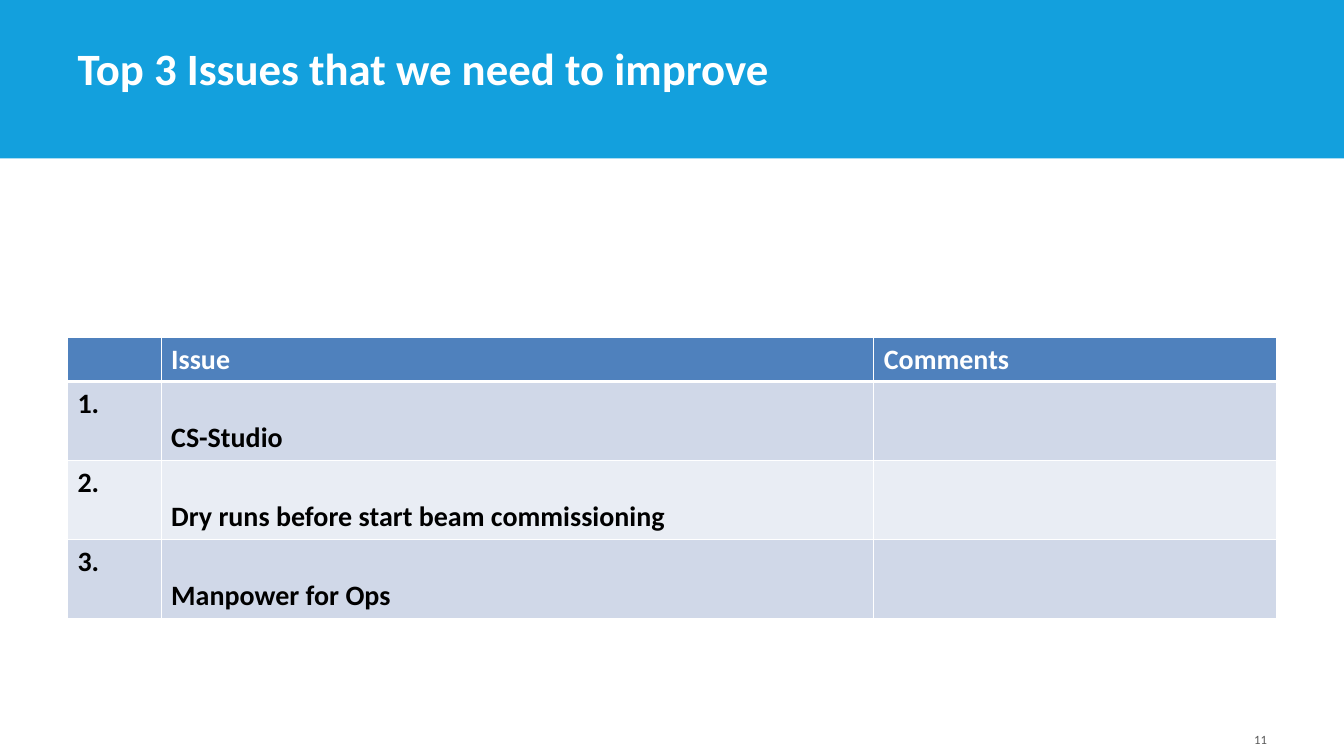
from dataclasses import dataclass

from lxml import etree
from pptx import Presentation
from pptx.dml.color import RGBColor
from pptx.enum.shapes import MSO_SHAPE
from pptx.enum.text import MSO_ANCHOR, MSO_AUTO_SIZE, PP_ALIGN
from pptx.oxml.ns import qn
from pptx.table import _Cell
from pptx.text.text import _Paragraph
from pptx.util import Cm, Pt

RECTANGLE = MSO_SHAPE.RECTANGLE
TOP, BOTTOM = MSO_ANCHOR.TOP, MSO_ANCHOR.BOTTOM
LEFT, RIGHT = PP_ALIGN.LEFT, PP_ALIGN.RIGHT
NO_AUTOFIT = MSO_AUTO_SIZE.NONE

WHITE = RGBColor(0xFF, 0xFF, 0xFF)
BLACK = RGBColor(0x00, 0x00, 0x00)
GREY = RGBColor(0x59, 0x59, 0x59)
BAND_BLUE = RGBColor(0x13, 0xA0, 0xDD)
HEADER_BLUE = RGBColor(0x4F, 0x81, 0xBD)
ROW_DARK = RGBColor(0xD0, 0xD8, 0xE8)
ROW_LIGHT = RGBColor(0xE9, 0xED, 0xF4)

FONT = "Calibri"
MARGIN = Cm(1.7)
COLUMN_WIDTHS = (Cm(2.36), Cm(17.96), Cm(10.16))
HEADER_HEIGHT, ISSUE_HEIGHT = Cm(1.1), Cm(1.99)


@dataclass
class TableRow:
    texts: tuple[str, str, str]
    fill: RGBColor
    color: RGBColor
    height: int
    top_line: int = 1
    bottom_line: int = 1
    issue_anchor: MSO_ANCHOR = BOTTOM


ROWS = [
    TableRow(("", "Issue", "Comments"), HEADER_BLUE, WHITE, HEADER_HEIGHT,
             bottom_line=3, issue_anchor=TOP),
    TableRow(("1.", "CS-Studio", ""), ROW_DARK, BLACK, ISSUE_HEIGHT, top_line=3),
    TableRow(("2.", "Dry runs before start beam commissioning", ""),
             ROW_LIGHT, BLACK, ISSUE_HEIGHT),
    TableRow(("3.", "Manpower for Ops", ""), ROW_DARK, BLACK, ISSUE_HEIGHT),
]


def set_font(p: _Paragraph, size: int, color: RGBColor, bold: bool) -> None:
    p.font.name = FONT
    p.font.size = Pt(size)
    p.font.bold = bold
    p.font.color.rgb = color


def set_borders(cell: _Cell, top: int, bottom: int) -> None:
    tcPr = cell._tc.get_or_add_tcPr()
    widths = {"a:lnL": 1, "a:lnR": 1, "a:lnT": top, "a:lnB": bottom}
    for i, (tag, width) in enumerate(widths.items()):
        ln = etree.Element(qn(tag), w=str(Pt(width)))
        fill = etree.SubElement(ln, qn("a:solidFill"))
        etree.SubElement(fill, qn("a:srgbClr"), val=str(WHITE))
        tcPr.insert(i, ln)


def add_issue_table(s) -> None:
    table = s.shapes.add_table(
        len(ROWS), len(COLUMN_WIDTHS), MARGIN, Cm(8.51),
        sum(COLUMN_WIDTHS), sum(row.height for row in ROWS)).table
    for column, width in zip(table.columns, COLUMN_WIDTHS):
        column.width = width
    for table_row, row in zip(table.rows, ROWS):
        table_row.height = row.height
        for cell, text in zip(table_row.cells, row.texts):
            cell.text = text
            cell.fill.solid()
            cell.fill.fore_color.rgb = row.fill
            set_font(cell.text_frame.paragraphs[0], 20, row.color, True)
            set_borders(cell, row.top_line, row.bottom_line)
        table_row.cells[1].vertical_anchor = row.issue_anchor


def add_title(s, slide_width: int) -> None:
    title = s.shapes.title
    title.left, title.top, title.width, title.height = MARGIN, Cm(0.97), Cm(26.44), Cm(1.55)
    tf = title.text_frame
    tf.text = "Top 3 Issues that we need to improve"
    tf.auto_size = NO_AUTOFIT
    tf.vertical_anchor = BOTTOM
    p = tf.paragraphs[0]
    p.alignment = LEFT
    set_font(p, 32, WHITE, True)

    band = s.shapes.add_shape(RECTANGLE, 0, 0, slide_width, Cm(3.99))
    band.shadow.inherit = False
    band.fill.solid()
    band.fill.fore_color.rgb = BAND_BLUE
    band.line.fill.background()
    title.element.addprevious(band.element)


def add_page_number(s) -> None:
    tf = s.shapes.add_textbox(Cm(24.28), Cm(17.93), Cm(7.9), Cm(1.02)).text_frame
    tf.word_wrap = True
    tf.vertical_anchor = BOTTOM
    tf.text = "11"
    p = tf.paragraphs[0]
    p.alignment = RIGHT
    set_font(p, 9, GREY, False)


def main() -> None:
    prs = Presentation()
    prs.slide_width, prs.slide_height = Cm(33.87), Cm(19.05)
    s = prs.slides.add_slide(prs.slide_layouts[5])
    add_title(s, prs.slide_width)
    add_page_number(s)
    add_issue_table(s)
    prs.save("out.pptx")


if __name__ == "__main__":
    main()
